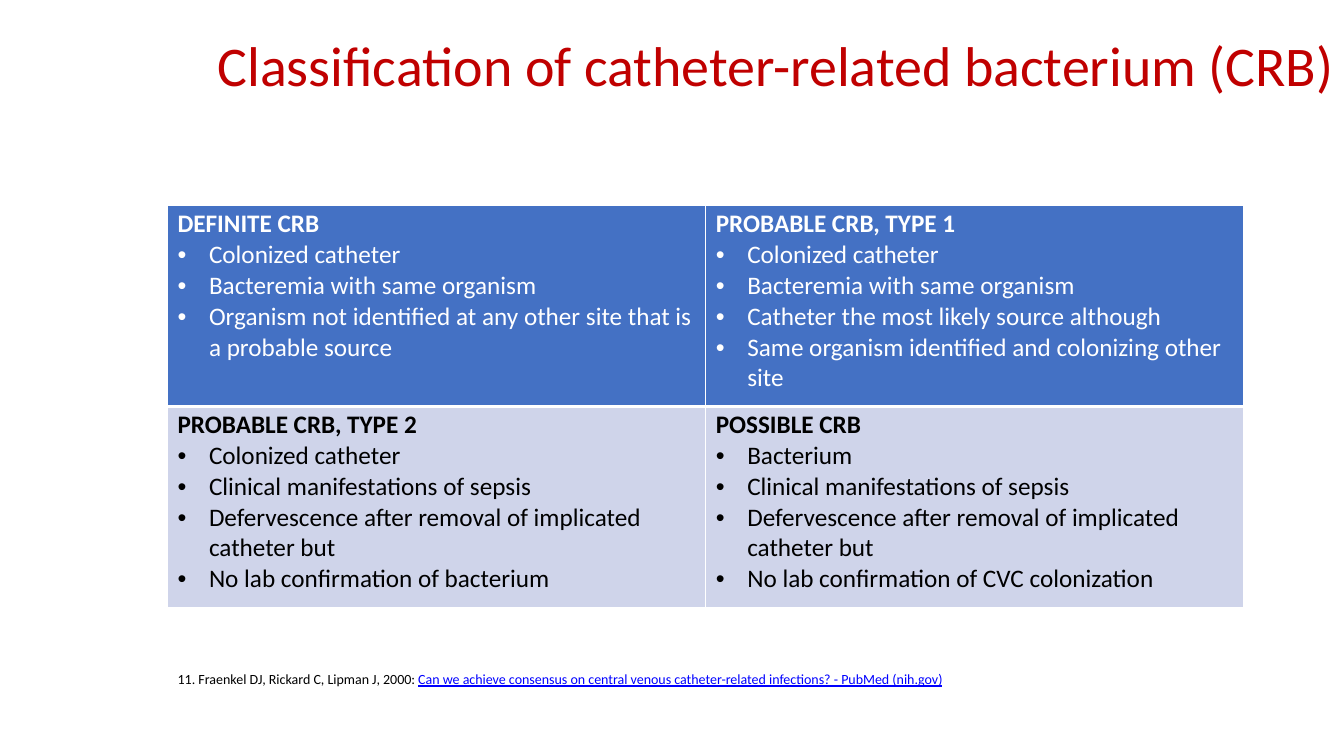
import pptx
import pptx.dml.color
import pptx.enum.text
import pptx.oxml
import pptx.oxml.ns
import pptx.util

Pt = pptx.util.Pt
RGB = pptx.dml.color.RGBColor
RED = RGB(0xC0, 0x00, 0x00)
BLUE = RGB(0x44, 0x71, 0xC4)
PALE = RGB(0xCF, 0xD4, 0xEA)
WHITE = RGB(0xFF, 0xFF, 0xFF)
BLACK = RGB(0x00, 0x00, 0x00)
LINK = RGB(0x00, 0x00, 0xFF)
FONT = "Calibri"
SPACE = pptx.oxml.ns.nsdecls("a")

GRID = [
    [
        ("DEFINITE CRB", [
            "Colonized catheter",
            "Bacteremia with same organism",
            "Organism not identified at any other site that is a probable source",
        ]),
        ("PROBABLE CRB, TYPE 1", [
            "Colonized catheter",
            "Bacteremia with same organism",
            "Catheter the most likely source although",
            "Same organism identified and colonizing other site",
        ]),
    ],
    [
        ("PROBABLE CRB, TYPE 2", [
            "Colonized catheter",
            "Clinical manifestations of sepsis",
            "Defervescence after removal of implicated catheter but",
            "No lab confirmation of bacterium",
        ]),
        ("POSSIBLE CRB", [
            "Bacterium",
            "Clinical manifestations of sepsis",
            "Defervescence after removal of implicated catheter but",
            "No lab confirmation of CVC colonization",
        ]),
    ],
]


def style(font, size, color, bold=False):
    """Set the face, size, colour and weight of a font."""
    font.name = FONT
    font.size = Pt(size)
    font.bold = bold
    font.color.rgb = color


def add_text(slide, box, text, size, color):
    """Add a one-line text box and return its paragraph."""
    frame = slide.shapes.add_textbox(*map(Pt, box)).text_frame
    frame.word_wrap = True
    frame.auto_size = pptx.enum.text.MSO_AUTO_SIZE.SHAPE_TO_FIT_TEXT
    frame.margin_left = frame.margin_right = frame.margin_bottom = 0
    frame.margin_top = Pt(1.5)
    para = frame.paragraphs[0]
    para.add_run().text = text
    style(para.font, size, color)
    return para


def indent(para, left, first=0):
    """Indent a paragraph, with a bullet when its first line hangs."""
    props = para._p.get_or_add_pPr()
    props.set("marL", str(Pt(left)))
    props.set("indent", str(Pt(first)))
    if first:
        props.append(pptx.oxml.parse_xml(f'<a:buFont {SPACE} typeface="Arial"/>'))
        props.append(pptx.oxml.parse_xml(f'<a:buChar {SPACE} char="•"/>'))


def border(cell, widths):
    """Draw white left, right, top and bottom cell borders."""
    props = cell._tc.get_or_add_tcPr()
    for spot, (side, width) in enumerate(zip("LRTB", widths)):
        props.insert(spot, pptx.oxml.parse_xml(
            f'<a:ln{side} {SPACE} w="{Pt(width)}"><a:solidFill>'
            f'<a:srgbClr val="{WHITE}"/></a:solidFill></a:ln{side}>'))


def fill_cell(cell, head, items, fill, color):
    """Fill a cell with a bold heading and a bulleted list."""
    cell.fill.solid()
    cell.fill.fore_color.rgb = fill
    cell.margin_left = cell.margin_right = cell.margin_bottom = 0
    cell.margin_top = Pt(2.4)
    frame = cell.text_frame
    para = frame.paragraphs[0]
    para.text = head
    indent(para, 7.2)
    style(para.font, 18, color, True)
    for item in items:
        para = frame.add_paragraph()
        para.text = item
        indent(para, 29.7, -22.5)
        style(para.font, 18, color)


def add_grid(slide):
    """Add the two-by-two table of classes."""
    box = map(Pt, (119.6, 146.9, 769, 287))
    table = slide.shapes.add_table(2, 2, *box).table
    table.first_row = table.horz_banding = False
    looks = [(BLUE, WHITE, (1, 1, 1, 3)), (PALE, BLACK, (1, 1, 3, 1))]
    for row, (fill, color, widths) in enumerate(looks):
        for col, (head, items) in enumerate(GRID[row]):
            cell = table.cell(row, col)
            fill_cell(cell, head, items, fill, color)
            border(cell, widths)


def main():
    """Build and save the slide."""
    deck = pptx.Presentation()
    deck.slide_width, deck.slide_height = Pt(960), Pt(540)
    slide = deck.slides.add_slide(deck.slide_layouts[6])
    add_text(slide, (155.3, 20.2, 800.6, 50),
             "Classification of catheter-related bacterium (CRB)", 40, RED)
    add_grid(slide)
    note = add_text(slide, (126.9, 477.4, 553, 13.7),
                    "11. Fraenkel DJ, Rickard C, Lipman J, 2000: ", 10, BLACK)
    link = note.add_run()
    link.text = ("Can we achieve consensus on central venous "
                 "catheter-related infections? - PubMed (nih.gov)")
    link.font.color.rgb = LINK
    link.font.underline = True
    deck.save("out.pptx")


if __name__ == "__main__":
    main()
